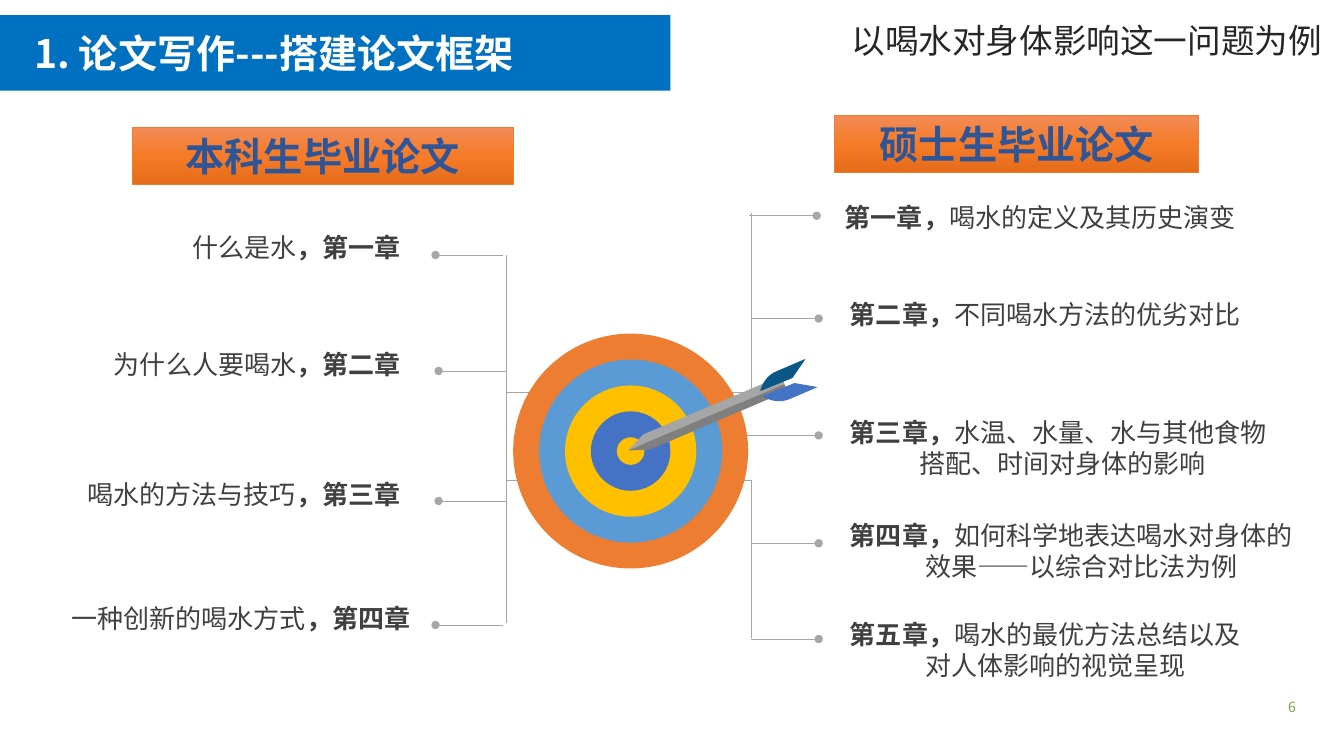
"""Build the slide that compares two thesis outlines around a target."""
import copy
import pptx
import pptx.dml.color
import pptx.enum.shapes
import pptx.enum.text
import pptx.oxml
import pptx.oxml.ns
import pptx.util
from dataclasses import dataclass
from lxml import etree

qn = pptx.oxml.ns.qn
Pt = pptx.util.Pt
Align = pptx.enum.text.PP_ALIGN
Mid = pptx.enum.text.MSO_ANCHOR.MIDDLE
Top = pptx.enum.text.MSO_ANCHOR.TOP
Oval = pptx.enum.shapes.MSO_SHAPE.OVAL
Rect = pptx.enum.shapes.MSO_SHAPE.RECTANGLE
Straight = pptx.enum.shapes.MSO_CONNECTOR.STRAIGHT


@dataclass
class Theme:
    font: str = "Noto Sans CJK SC"
    head: float = 28
    note: float = 24
    body: float = 18.6
    small: float = 10
    pitch: float = 3.1
    ink: str = "404040"
    dark: str = "262626"
    white: str = "FFFFFF"
    blue: str = "0070C0"
    navy: str = "2F5597"
    green: str = "70AD47"
    gray: str = "A6A6A6"
    shade: str = "7F7F7F"
    orange: str = "ED7D31"
    sky: str = "5B9BD5"
    gold: str = "FFC000"
    royal: str = "4472C4"
    deep: str = "0A5686"
    glow: tuple = ("F18C57", "F67B28", "E56C19")


def rgb(tone):
    return pptx.dml.color.RGBColor.from_string(tone)


def put(item, **props):
    for name, value in props.items():
        setattr(item, name, value)


class Deck:
    def __init__(self, theme, cols=133.3, rows=75):
        self.theme = theme
        self.prs = pptx.Presentation()
        self.cell = pptx.util.Inches(0.1)
        put(self.prs, slide_width=self.at(cols), slide_height=self.at(rows))
        self.slide = self.prs.slides.add_slide(self.prs.slide_layouts[3])
        self.shapes = self.slide.shapes

    def at(self, n):
        return int(n * self.cell)

    def box(self, *lens):
        return [self.at(n) for n in lens]

    def place(self, item, *lens):
        put(item, **dict(zip(("left", "top", "width", "height"), self.box(*lens))))

    def frame(self, item, anchor=Mid, left=1, edge=0.5):
        put(item.text_frame, word_wrap=True, vertical_anchor=anchor,
            auto_size=pptx.enum.text.MSO_AUTO_SIZE.NONE,
            margin_left=self.at(left), margin_right=self.at(1),
            margin_top=self.at(edge), margin_bottom=self.at(edge))
        return item.text_frame

    def say(self, para, text, size, tone, bold=False, align=Align.LEFT):
        para.alignment = align
        for num, line in enumerate(text.split("\n")):
            if num:
                para.add_line_break()
            run = para.add_run()
            run.text = line
            put(run.font, size=Pt(size), bold=bold, name=self.theme.font)
            run.font.color.rgb = rgb(tone)
            etree.SubElement(run.font._element, qn("a:ea"), typeface=self.theme.font)

    def paint(self, shape, tone):
        shape.shadow.inherit = False
        shape.fill.solid()
        shape.fill.fore_color.rgb = rgb(tone)
        shape.line.fill.background()

    def title(self, text, *lens):
        item = self.shapes.title
        self.place(item, *lens)
        geom = etree.SubElement(item.element.spPr, qn("a:prstGeom"), prst="roundRect")
        guides = etree.SubElement(geom, qn("a:avLst"))
        etree.SubElement(guides, qn("a:gd"), name="adj", fmla="val 50000")
        self.paint(item, self.theme.blue)
        para = self.frame(item, left=6.5).paragraphs[0]
        self.say(para, text, self.theme.head, self.theme.white, True)

    def text(self, text, size, tone, align, *lens):
        item = self.shapes.add_textbox(*self.box(*lens))
        self.say(self.frame(item, edge=0).paragraphs[0], text, size, tone, align=align)

    def label(self, text, *lens):
        item = self.shapes.add_shape(Rect, *self.box(*lens))
        item.shadow.inherit = False
        item.fill.gradient()
        item.fill.gradient_angle = 270
        stops = item.element.find(".//" + qn("a:gsLst"))
        stops.append(copy.deepcopy(stops[-1]))
        for num, (stop, tone) in enumerate(zip(item.fill.gradient_stops, self.theme.glow)):
            stop.position = num / 2
            stop.color.rgb = rgb(tone)
        item.line.color.rgb = rgb(self.theme.orange)
        item.line.width = Pt(0.5)
        self.say(self.frame(item).paragraphs[0], text, self.theme.head,
                 self.theme.navy, True, Align.CENTER)

    def items(self, slot, rows, left, width):
        item = self.slide.placeholders[slot]
        self.place(item, left, rows[0][0], width, rows[-1][0] - rows[0][0] + 8)
        frame = self.frame(item, Top)
        pitch, end = self.theme.pitch, rows[0][0]
        for num, (top, inset, hang, parts) in enumerate(rows):
            para = frame.add_paragraph() if num else frame.paragraphs[0]
            put(para, line_spacing=Pt(pitch * 7.2), space_after=Pt(0),
                space_before=Pt(round((top - end) * 7.2, 1)))
            props = para._p.get_or_add_pPr()
            props.set("marL", str(self.at(inset + hang)))
            props.set("indent", str(-self.at(hang)))
            etree.SubElement(props, qn("a:buNone"))
            for text, bold in parts:
                self.say(para, text, self.theme.body, self.theme.ink, bold)
            end = top + pitch * (1 + sum(text.count("\n") for text, bold in parts))

    def line(self, x, y, to, down, dot=False):
        link = self.shapes.add_connector(Straight, *self.box(x, y, to, down))
        link.line.color.rgb = rgb(self.theme.gray)
        link.line.width = Pt(0.5)
        if dot:
            etree.SubElement(link.element.find(".//" + qn("a:ln")),
                             qn("a:tailEnd"), type="oval")
        etree.SubElement(link.element.spPr, qn("a:effectLst"))

    def ring(self, x, y, size, tone):
        item = self.shapes.add_shape(Oval, *self.box(x - size, y - size, 2 * size, 2 * size))
        self.paint(item, tone)

    def poly(self, dots, tone):
        dots = [self.box(*dot) for dot in dots]
        pen = self.shapes.build_freeform(*dots[0], scale=1.0)
        pen.add_line_segments(dots[1:], close=True)
        self.paint(pen.convert_to_shape(), tone)

    def wing(self, root, bend, crest, tip, notch, tone):
        steps = [n / 10 for n in range(11)]
        curve = [tuple((1 - t) ** 2 * (1 + 2 * t) * a + 3 * (1 - t) * t * t * b + t ** 3 * c
                       for a, b, c in zip(root, bend, crest)) for t in steps]
        self.poly(curve + [tip, notch], tone)


def main():
    look = Theme()
    deck = Deck(look)
    for x, y, to, down in ((50.2, 25.3, 50.2, 61.8), (74.5, 21.1, 74.5, 39.5),
                           (74.5, 47.6, 74.5, 63.3)):
        deck.line(x, y, to, down)
    for y in (38.9, 47.7):
        deck.line(58.4, y, 50.2, y)
        deck.line(66.2, y, 74.5, y)
    for x, y, to in ((49.9, 25.3, 43.2), (50.2, 36.8, 43.5), (50.2, 49.7, 43.5),
                     (49.9, 62, 43.2), (74.3, 21.4, 81), (74.5, 31.6, 81.2),
                     (66.2, 43.2, 81.2), (74.5, 53.9, 81.2), (74.5, 63.4, 81.2)):
        deck.line(x, y, to, y, True)

    tones = (look.orange, look.sky, look.gold, look.royal, look.gold)
    for num, tone in enumerate(tones):
        deck.ring(62.55, 44.75, 11.65 - 2.57 * num, tone)
    deck.poly([(63.8, 43.1), (77.5, 37.3), (77.8, 38.1), (62.3, 44.7)], look.gray)
    deck.poly([(64.5, 44.6), (78.1, 38.8), (77.8, 38.1), (62.3, 44.7)], look.shade)
    deck.wing((75.4, 38.8), (75.7, 37.3), (77.1, 36.8), (79.9, 35.6), (78.6, 37.5), look.deep)
    deck.wing((75.6, 39.3), (76.9, 40.2), (78.3, 39.6), (81.1, 38.4), (78.8, 38), look.royal)

    deck.title("1. 论文写作---搭建论文框架", -3.1, 1.5, 69.6, 7.5)
    deck.text("以喝水对身体影响这一问题为例", look.note, look.dark, Align.RIGHT,
              79.9, 1.5, 52.2, 5)
    deck.label("本科生毕业论文", 13.1, 12.6, 37.8, 5.7)
    deck.label("硕士生毕业论文", 82.8, 11.4, 36.1, 5.7)
    deck.items(1, [(top, inset, 0, [(text, False), ("，" + mark, True)])
                   for top, inset, text, mark in (
                       (22.5, 12, "什么是水", "第一章"),
                       (34.1, 4.2, "为什么人要喝水", "第二章"),
                       (47, 1.6, "喝水的方法与技巧", "第三章"),
                       (59.3, 0, "一种创新的喝水方式", "第四章"))], 6.1, 37)
    deck.items(2, [(top, inset, hang, [(mark + "，", True), (text, False)])
                   for top, inset, hang, mark, text in (
                       (19.5, 0, 0, "第一章", "喝水的定义及其历史演变"),
                       (29.1, 0.5, 0, "第二章", "不同喝水方法的优劣对比"),
                       (40.8, 0.5, 6.9, "第三章", "水温、水量、水与其他食物\n搭配、时间对身体的影响"),
                       (51, 0.5, 7.5, "第四章", "如何科学地表达喝水对身体的\n效果——以综合对比法为例"),
                       (60.9, 0.5, 7.5, "第五章", "喝水的最优方法总结以及\n对人体影响的视觉呈现"))],
               82.8, 50.5)
    deck.text("6", look.small, look.green, Align.CENTER, 126, 69.1, 4.3, 2)
    deck.prs.save("out.pptx")


if __name__ == "__main__":
    main()
